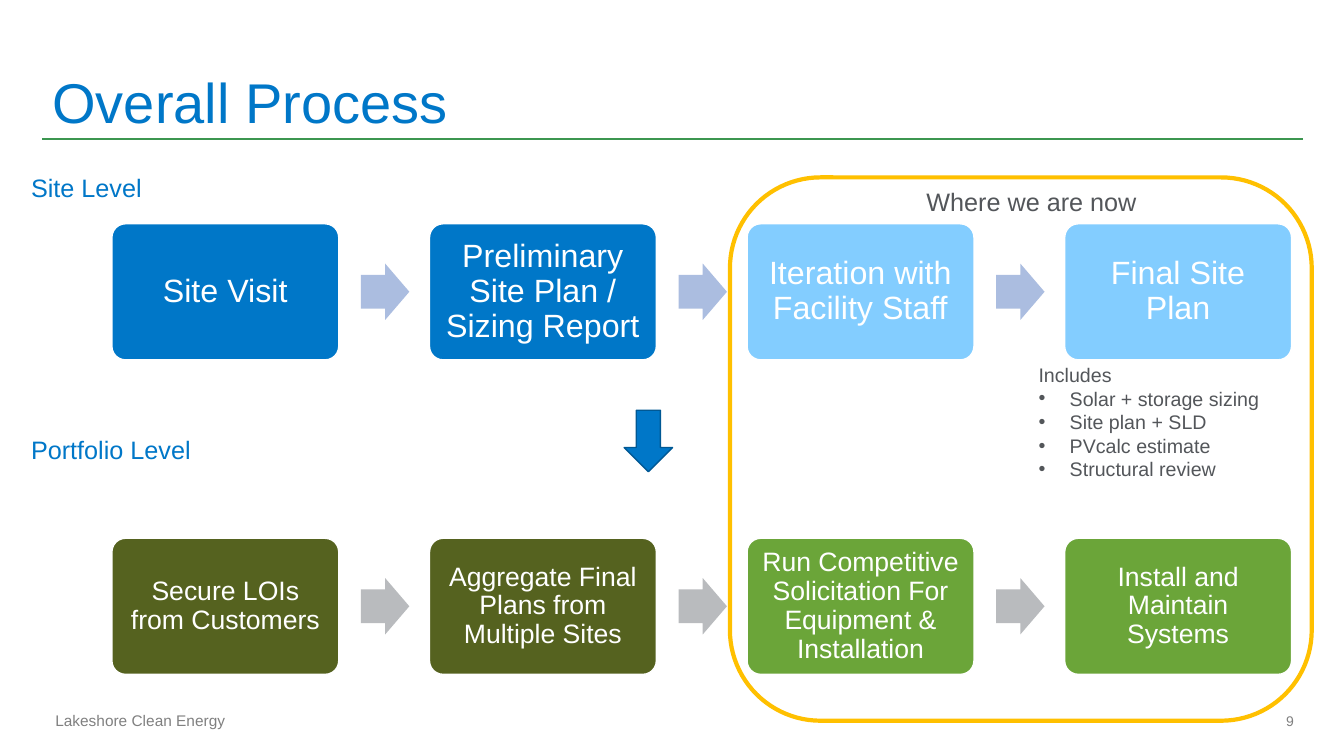
from lxml import etree
from pptx import Presentation
from pptx.dml.color import RGBColor
from pptx.enum import shapes, text
from pptx.oxml.ns import qn
from pptx.util import Inches, Pt

FONT = "Arial"
WHITE = RGBColor(0xFF, 0xFF, 0xFF)
BLUE = RGBColor(0x00, 0x77, 0xC8)
DARK_BLUE = RGBColor(0x00, 0x58, 0x94)
LIGHT_BLUE = RGBColor(0x83, 0xCD, 0xFF)
PALE_BLUE = RGBColor(0xAB, 0xBD, 0xE0)
OLIVE = RGBColor(0x55, 0x62, 0x1F)
GREEN = RGBColor(0x6B, 0xA5, 0x39)
RULE_GREEN = RGBColor(0x3C, 0x96, 0x50)
AMBER = RGBColor(0xFF, 0xC0, 0x00)
SLATE = RGBColor(0x53, 0x56, 0x5A)
GREY = RGBColor(0x80, 0x80, 0x80)
LIGHT_GREY = RGBColor(0xB9, 0xBB, 0xBE)

SHAPE = shapes.MSO_SHAPE
ALIGN = text.PP_ALIGN
ANCHOR = text.MSO_ANCHOR

STEP_LEFT, STEP_PITCH = 1.11, 3.15
STEP_WIDTH, STEP_HEIGHT = 2.25, 1.35
ARROW_OFFSET, ARROW_WIDTH, ARROW_HEIGHT = 2.47, 0.48, 0.56

SITE_STEPS = [
    ("Site Visit", BLUE),
    ("Preliminary Site Plan / Sizing Report", BLUE),
    ("Iteration with Facility Staff", LIGHT_BLUE),
    ("Final Site Plan", LIGHT_BLUE),
]
PORTFOLIO_STEPS = [
    ("Secure LOIs from Customers", OLIVE),
    ("Aggregate Final Plans from Multiple Sites", OLIVE),
    ("Run Competitive Solicitation For Equipment & Installation", GREEN),
    ("Install and Maintain Systems", GREEN),
]
PLAN_CONTENTS = [
    "Solar + storage sizing",
    "Site plan + SLD",
    "PVcalc estimate",
    "Structural review",
]


def format_runs(p, size, color):
    for r in p.runs:
        r.font.name = FONT
        r.font.size = Pt(size)
        r.font.color.rgb = color


def place(sp, left, top, width, height):
    sp.left, sp.top = Inches(left), Inches(top)
    sp.width, sp.height = Inches(width), Inches(height)


def add_label(slide, box, wording, size, color, align=ALIGN.LEFT,
              anchor=ANCHOR.TOP):
    sp = slide.shapes.add_textbox(*map(Inches, box))
    tf = sp.text_frame
    tf.word_wrap = True
    tf.vertical_anchor = anchor
    tf.text = wording
    p = tf.paragraphs[0]
    p.alignment = align
    format_runs(p, size, color)


def add_block(slide, kind, box, fill=None, line=None, line_width=1, adj=()):
    """Add a preset shape; without a fill or line colour that part is empty."""
    sp = slide.shapes.add_shape(kind, *map(Inches, box))
    sp.shadow.inherit = False
    for i, value in enumerate(adj):
        sp.adjustments[i] = value
    if fill is None:
        sp.fill.background()
    else:
        sp.fill.solid()
        sp.fill.fore_color.rgb = fill
    if line is None:
        sp.line.fill.background()
    else:
        sp.line.color.rgb = line
        sp.line.width = Pt(line_width)
    return sp


def add_step(slide, left, top, wording, fill, size, inset):
    sp = add_block(slide, SHAPE.ROUNDED_RECTANGLE,
                   (left, top, STEP_WIDTH, STEP_HEIGHT), fill, WHITE,
                   adj=[0.1])
    tf = sp.text_frame
    tf.word_wrap = True
    tf.vertical_anchor = ANCHOR.MIDDLE
    tf.margin_left = tf.margin_right = Inches(inset)
    tf.margin_top = tf.margin_bottom = Inches(inset)
    tf.text = wording
    p = tf.paragraphs[0]
    p.alignment = ALIGN.CENTER
    p.line_spacing = 0.9
    format_runs(p, size, WHITE)


def add_process(slide, top, steps, arrow_color, size, inset):
    """Add a row of steps with an arrow between each pair."""
    arrow_top = top + (STEP_HEIGHT - ARROW_HEIGHT) / 2
    for i, (wording, fill) in enumerate(steps):
        left = STEP_LEFT + i * STEP_PITCH
        add_step(slide, left, top, wording, fill, size, inset)
        if i < len(steps) - 1:
            add_block(slide, SHAPE.RIGHT_ARROW,
                      (left + ARROW_OFFSET, arrow_top,
                       ARROW_WIDTH, ARROW_HEIGHT),
                      arrow_color, adj=[0.6, 0.5])


def add_rule(slide, left, right, y):
    line = slide.shapes.add_connector(
        shapes.MSO_CONNECTOR.STRAIGHT,
        Inches(left), Inches(y), Inches(right), Inches(y))
    line.line.color.rgb = RULE_GREEN
    line.line.width = Pt(1.5)
    etree.SubElement(line._element.spPr, qn("a:effectLst"))


def fill_title(title, wording):
    place(title, 0.42, 0.35, 12.59, 1.03)
    tf = title.text_frame
    tf.text = wording
    tf.auto_size = text.MSO_AUTO_SIZE.NONE
    tf.vertical_anchor = ANCHOR.BOTTOM
    p = tf.paragraphs[0]
    p.alignment = ALIGN.LEFT
    p.line_spacing = 0.8
    format_runs(p, 40, BLUE)


def set_bullet(p, char=None, indent=0.0):
    pPr = p._p.get_or_add_pPr()
    pPr.set("marL", str(Inches(indent)))
    pPr.set("indent", str(-Inches(indent)))
    if char:
        etree.SubElement(pPr, qn("a:buChar"), char=char)
    else:
        etree.SubElement(pPr, qn("a:buNone"))


def fill_list(body, heading, items):
    place(body, 10.2, 3.55, 2.92, 1.58)
    tf = body.text_frame
    tf.text = "\n".join([heading, *items])
    tf.auto_size = text.MSO_AUTO_SIZE.NONE
    for i, p in enumerate(tf.paragraphs):
        p.space_before = Pt(0)
        if i == 0:
            set_bullet(p)
        else:
            set_bullet(p, "•", 0.31)
        format_runs(p, 14, SLATE)


def main():
    prs = Presentation()
    prs.slide_width, prs.slide_height = Inches(13.33), Inches(7.5)
    slide = prs.slides.add_slide(prs.slide_layouts[1])

    fill_title(slide.shapes.title, "Overall Process")
    fill_list(slide.placeholders[1], "Includes", PLAN_CONTENTS)
    add_rule(slide, 0.42, 12.92, 1.38)

    add_label(slide, (0.21, 1.66, 1.78, 0.4), "Site Level", 18, BLUE)
    add_process(slide, 2.22, SITE_STEPS, PALE_BLUE, 23, 0.1)
    add_block(slide, SHAPE.DOWN_ARROW, (6.19, 4.07, 0.48, 0.61),
              BLUE, DARK_BLUE)
    add_label(slide, (0.21, 4.26, 2.46, 0.4), "Portfolio Level", 18, BLUE)
    add_process(slide, 5.34, PORTFOLIO_STEPS, LIGHT_GREY, 19, 0.08)

    add_block(slide, SHAPE.ROUNDED_RECTANGLE, (7.24, 1.76, 5.77, 5.39),
              line=AMBER, line_width=3)
    add_label(slide, (9.09, 1.8, 2.46, 0.4), "Where we are now", 18, SLATE)

    add_label(slide, (0.45, 7.01, 2.4, 0.4), "Lakeshore Clean Energy",
              11, GREY)
    add_label(slide, (11.35, 6.95, 1.58, 0.4), "9", 10, GREY,
              ALIGN.RIGHT, ANCHOR.MIDDLE)
    prs.save("out.pptx")


if __name__ == "__main__":
    main()
